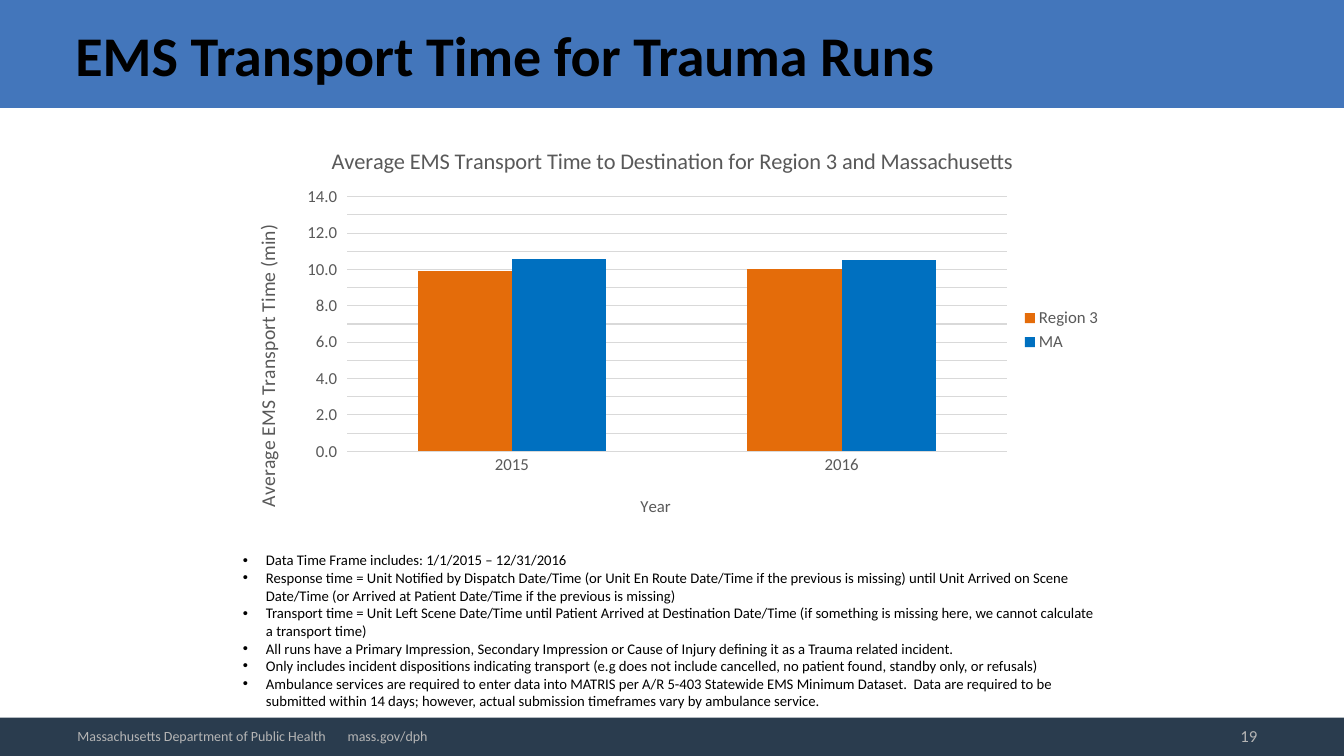
from dataclasses import dataclass

from lxml import etree
from pptx import Presentation
from pptx.chart.data import CategoryChartData
from pptx.dml.color import RGBColor
from pptx.enum.chart import XL_CHART_TYPE, XL_LEGEND_POSITION, XL_TICK_MARK
from pptx.enum.shapes import MSO_SHAPE
from pptx.enum.text import MSO_ANCHOR, PP_ALIGN
from pptx.oxml.ns import qn
from pptx.util import Inches, Pt

COLUMNS = XL_CHART_TYPE.COLUMN_CLUSTERED
LEGEND_RIGHT = XL_LEGEND_POSITION.RIGHT
TICK_NONE, TICK_OUTSIDE = XL_TICK_MARK.NONE, XL_TICK_MARK.OUTSIDE
RECTANGLE = MSO_SHAPE.RECTANGLE
TOP, MIDDLE = MSO_ANCHOR.TOP, MSO_ANCHOR.MIDDLE
LEFT, RIGHT = PP_ALIGN.LEFT, PP_ALIGN.RIGHT


@dataclass(frozen=True)
class Theme:
    font: str = "Calibri"
    band: str = "4376BB"
    footer: str = "2A3C4E"
    footer_text: str = "B5B5B5"
    text: str = "000000"
    chart_text: str = "595959"
    grid: str = "D9D9D9"
    region: str = "E46C0A"
    state: str = "0070C0"
    title_size: float = 40
    note_size: float = 10.5
    footer_size: float = 10
    number_size: float = 12
    chart_title_size: float = 16
    value_title_size: float = 14
    axis_size: float = 12


THEME = Theme()
PAGE_WIDTH, PAGE_HEIGHT = 13.33, 7.5
FOOTER_TOP = 7.12

NOTES = [
    "Data Time Frame includes: 1/1/2015 – 12/31/2016",
    "Response time = Unit Notified by Dispatch Date/Time (or Unit En Route Date/Time if the "
    "previous is missing) until Unit Arrived on Scene Date/Time (or Arrived at Patient "
    "Date/Time if the previous is missing)",
    "Transport time = Unit Left Scene Date/Time until Patient Arrived at Destination Date/Time "
    "(if something is missing here, we cannot calculate a transport time)",
    "All runs have a Primary Impression, Secondary Impression or Cause of Injury defining it "
    "as a Trauma related incident.",
    "Only includes incident dispositions indicating transport (e.g does not include cancelled, "
    "no patient found, standby only, or refusals)",
    "Ambulance services are required to enter data into MATRIS per A/R 5-403 Statewide EMS "
    "Minimum Dataset.  Data are required to be submitted within 14 days; however, actual "
    "submission timeframes vary by ambulance service.",
]
YEARS = ["2015", "2016"]
SERIES = [("Region 3", [9.9, 10], THEME.region), ("MA", [10.6, 10.5], THEME.state)]


def set_font(font, size, color, bold=False):
    font.name, font.size, font.bold = THEME.font, Pt(size), bold
    font.color.rgb = RGBColor.from_string(color)


def write(frame, text, size, color, bold=False, align=LEFT, bullet=None, tab=None):
    """Fill a text frame, one paragraph per line."""
    for index, line in enumerate(text.split("\n")):
        para = frame.add_paragraph() if index else frame.paragraphs[0]
        para.alignment = align
        properties = para._p.get_or_add_pPr()
        if bullet:
            indent = Inches(0.23)
            properties.set("marL", str(indent))
            properties.set("indent", str(-indent))
            etree.SubElement(properties, qn("a:buFont"), typeface="Arial")
            etree.SubElement(properties, qn("a:buChar"), char=bullet)
        if tab:
            stops = etree.SubElement(properties, qn("a:tabLst"))
            etree.SubElement(stops, qn("a:tab"), pos=str(Inches(tab)), algn="l")
        span = para.add_run()
        span.text = line
        set_font(span.font, size, color, bold)


def place(element, **fractions):
    """Lay out a chart part by fractions of the chart area."""
    layout = element.find(qn("c:layout"))
    if layout is None:
        layout = etree.Element(qn("c:layout"))
        text = element.find(qn("c:tx"))
        element.insert(0 if text is None else 1, layout)
    manual = etree.SubElement(layout, qn("c:manualLayout"))
    if "w" in fractions:
        etree.SubElement(manual, qn("c:layoutTarget"), val="inner")
    for side in ("x", "y"):
        etree.SubElement(manual, qn(f"c:{side}Mode"), val="edge")
    for side, value in fractions.items():
        etree.SubElement(manual, qn(f"c:{side}"), val=str(value))


class SlideBuilder:
    def __init__(self, page, theme):
        self.page, self.theme = page, theme

    def band(self, top, height, color):
        box = self.page.shapes.add_shape(
            RECTANGLE, 0, Inches(top), Inches(PAGE_WIDTH), Inches(height))
        box.shadow.inherit = False
        box.fill.solid()
        box.fill.fore_color.rgb = RGBColor.from_string(color)
        box.line.fill.background()

    def text(self, place_at, text, size, color, anchor=MIDDLE, **format_options):
        box = self.page.shapes.add_textbox(*map(Inches, place_at))
        box.text_frame.word_wrap = True
        box.text_frame.vertical_anchor = anchor
        write(box.text_frame, text, size, color, **format_options)

    def axis(self, axis, title, title_size, tick, **title_place):
        axis.major_tick_mark, axis.minor_tick_mark = tick, TICK_NONE
        set_font(axis.tick_labels.font, self.theme.axis_size, self.theme.chart_text)
        write(axis.axis_title.text_frame, title, title_size, self.theme.chart_text)
        place(axis.axis_title._element, **title_place)

    def line(self, line):
        line.color.rgb = RGBColor.from_string(self.theme.grid)
        line.width = Pt(0.75)

    def chart(self, place_at, title, years, series):
        theme = self.theme
        data = CategoryChartData(number_format="0.0")
        data.categories = years
        for name, values, _ in series:
            data.add_series(name, values)
        chart = self.page.shapes.add_chart(COLUMNS, *map(Inches, place_at), data).chart
        set_font(chart.font, theme.axis_size, theme.chart_text)
        write(chart.chart_title.text_frame, title, theme.chart_title_size, theme.chart_text)
        place(chart._chartSpace.chart.plotArea, x=0.13, y=0.17, w=0.75, h=0.63)

        # Columns
        plot = chart.plots[0]
        plot.gap_width, plot.overlap, plot.vary_by_categories = 150, 0, False
        for column, (_, _, color) in zip(plot.series, series):
            column.format.fill.solid()
            column.format.fill.fore_color.rgb = RGBColor.from_string(color)

        # Axes
        years_axis, minutes_axis = chart.category_axis, chart.value_axis
        self.axis(years_axis, "Year", theme.axis_size, TICK_NONE, x=0.46, y=0.9)
        self.line(years_axis.format.line)
        self.axis(minutes_axis, "Average EMS Transport Time (min)",
                  theme.value_title_size, TICK_OUTSIDE, x=0.02, y=0.23)
        body = minutes_axis.axis_title._element.find(".//" + qn("a:bodyPr"))
        body.set("rot", "-5400000")
        body.set("vert", "horz")
        minutes_axis.minimum_scale, minutes_axis.maximum_scale = 0, 14
        minutes_axis.major_unit = 1
        minutes_axis.tick_labels.number_format = "0.0"
        minutes_axis.tick_labels.number_format_is_linked = False
        minutes_axis.format.line.fill.background()
        self.line(minutes_axis.major_gridlines.format.line)

        # Legend
        chart.has_legend = True
        chart.legend.position = LEGEND_RIGHT
        chart.legend.include_in_layout = False
        set_font(chart.legend.font, theme.axis_size, theme.chart_text)


def main():
    deck = Presentation()
    deck.slide_width, deck.slide_height = Inches(PAGE_WIDTH), Inches(PAGE_HEIGHT)
    builder = SlideBuilder(deck.slides.add_slide(deck.slide_layouts[6]), THEME)

    # Header and footer bands
    builder.band(0, 1.07, THEME.band)
    builder.band(FOOTER_TOP, PAGE_HEIGHT - FOOTER_TOP, THEME.footer)

    # Notes, heading and chart
    builder.text((2.31, 5.42, 8.72, 1.69), "\n".join(NOTES), THEME.note_size, THEME.text,
                 anchor=TOP, bullet="•")
    builder.text((0.65, 0.06, 12, 0.96), "EMS Transport Time for Trauma Runs",
                 THEME.title_size, THEME.text, bold=True)
    builder.chart((2.31, 1.27, 8.72, 4.01),
                  "Average EMS Transport Time to Destination for Region 3 and Massachusetts",
                  YEARS, SERIES)

    # Footer text
    builder.text((9.58, 7.1, 2.99, 0.4), "19", THEME.number_size, THEME.footer_text,
                 align=RIGHT)
    builder.text((0.67, FOOTER_TOP, 4.17, 0.37),
                 "Massachusetts Department of Public Health\tmass.gov/dph",
                 THEME.footer_size, THEME.footer_text, tab=2.68)
    deck.save("out.pptx")


if __name__ == "__main__":
    main()
